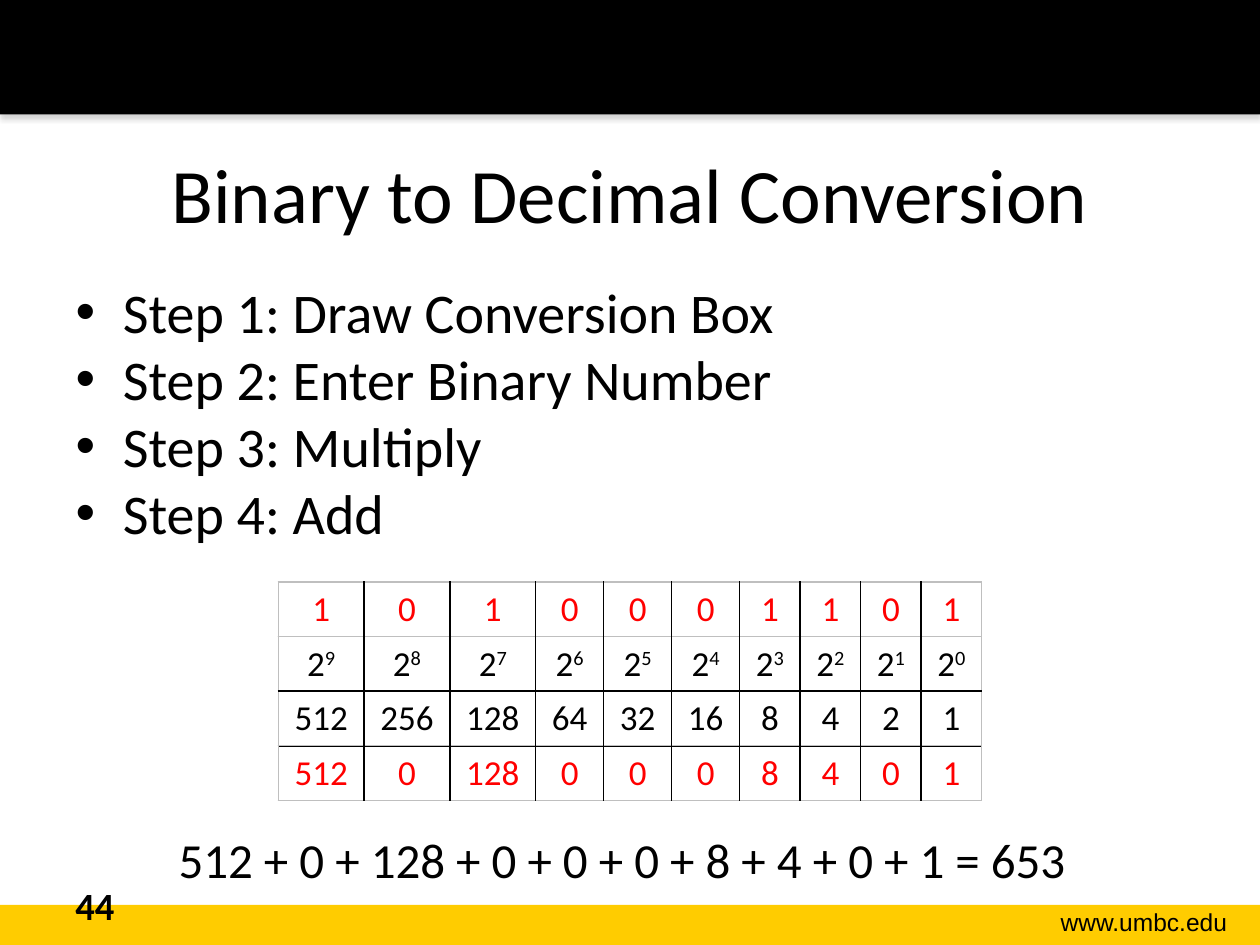
from lxml import etree
from pptx import Presentation
from pptx.dml.color import RGBColor
from pptx.enum.shapes import MSO_SHAPE
from pptx.enum.text import MSO_ANCHOR, PP_ALIGN
from pptx.oxml import parse_xml
from pptx.oxml.ns import nsdecls, qn
from pptx.util import Cm, Pt

RECTANGLE = MSO_SHAPE.RECTANGLE
MIDDLE, TOP = MSO_ANCHOR.MIDDLE, MSO_ANCHOR.TOP
LEFT, CENTER, RIGHT = PP_ALIGN.LEFT, PP_ALIGN.CENTER, PP_ALIGN.RIGHT

BLACK, RED, GOLD, GREY = "000000", "FF0000", "FFCC00", "BFBFBF"
SLIDE_WIDTH, SLIDE_HEIGHT = 25.4, 19.05
MARGIN = 1.27
COLUMN_WIDTHS = [1.73] * 3 + [1.37] * 3 + [1.22] * 4
ROW_HEIGHT = 1.1
BITS = "1010001101"


def color(value):
    return RGBColor.from_string(value)


def add_text(paragraph, text, size, fill=BLACK, font="Calibri", bold=False):
    run = paragraph.add_run()
    run.text = text
    run.font.size = Pt(size)
    run.font.name = font
    run.font.bold = bold
    run.font.color.rgb = color(fill)
    return run


def place(shape, left, top, width, height):
    shape.left, shape.top = Cm(left), Cm(top)
    shape.width, shape.height = Cm(width), Cm(height)


def add_bar(slide, top, height, fill):
    bar = slide.shapes.add_shape(RECTANGLE, 0, Cm(top), Cm(SLIDE_WIDTH), Cm(height))
    bar.shadow.inherit = False
    bar.fill.solid()
    bar.fill.fore_color.rgb = color(fill)
    bar.line.fill.background()
    return bar


def add_label(slide, left, top, width, height, text, size, alignment=LEFT, **style):
    box = slide.shapes.add_textbox(Cm(left), Cm(top), Cm(width), Cm(height))
    box.text_frame.word_wrap = True
    paragraph = box.text_frame.paragraphs[0]
    paragraph.alignment = alignment
    add_text(paragraph, text, size, **style)


def add_header(slide, height):
    bar = add_bar(slide, 0, height, BLACK)
    effects = bar._element.spPr.find(qn("a:effectLst"))
    effects.append(parse_xml(
        f'<a:outerShdw {nsdecls("a")} blurRad="39370" dist="22860" dir="5400000" '
        'rotWithShape="0"><a:srgbClr val="808080"><a:alpha val="35000"/>'
        '</a:srgbClr></a:outerShdw>'))


def add_footer(slide, top):
    add_bar(slide, top, SLIDE_HEIGHT - top, GOLD)
    add_label(slide, 19.94, top - 0.08, 5.05, 0.86, "www.umbc.edu", 14, RIGHT, font="Arial")
    add_label(slide, MARGIN, top - 0.59, 5.92, 1.02, "44", 22, bold=True)


def fill_title(slide, left, top, width, height):
    title = slide.shapes.title
    place(title, left, top, width, height)
    title.text_frame.vertical_anchor = MIDDLE
    paragraph = title.text_frame.paragraphs[0]
    paragraph.alignment = CENTER
    add_text(paragraph, "Binary to Decimal Conversion", 44)


def fill_steps(slide, left, top, width, height):
    body = slide.placeholders[1]
    place(body, left, top, width, height)
    frame = body.text_frame
    frame.vertical_anchor = TOP
    steps = ["Draw Conversion Box", "Enter Binary Number", "Multiply", "Add"]
    for number, step in enumerate(steps, 1):
        paragraph = frame.paragraphs[0] if number == 1 else frame.add_paragraph()
        paragraph.space_before = Pt(0)
        add_text(paragraph, f"Step {number}: {step}", 32)


def draw_border(cell, side, stroke):
    line = etree.SubElement(cell._tc.get_or_add_tcPr(), qn(f"a:ln{side}"), w="12700")
    fill = etree.SubElement(line, qn("a:solidFill"))
    etree.SubElement(fill, qn("a:srgbClr"), val=stroke)


def add_grid(slide, left, top, rows, fill=BLACK):
    """Each cell is a list of runs; every run after the first is an exponent."""
    last_row, last_column = len(rows) - 1, len(COLUMN_WIDTHS) - 1
    table = slide.shapes.add_table(
        len(rows), len(COLUMN_WIDTHS), Cm(left), Cm(top),
        Cm(sum(COLUMN_WIDTHS)), Cm(ROW_HEIGHT * len(rows))).table
    table.first_row = table.horz_banding = False
    for column, width in zip(table.columns, COLUMN_WIDTHS):
        column.width = Cm(width)
    for r, row in enumerate(rows):
        table.rows[r].height = Cm(ROW_HEIGHT)
        for c, texts in enumerate(row):
            cell = table.cell(r, c)
            outer = {"L": c == 0, "R": c == last_column, "T": r == 0, "B": r == last_row}
            for side, is_outer in outer.items():
                draw_border(cell, side, GREY if is_outer else BLACK)
            cell.fill.background()
            paragraph = cell.text_frame.paragraphs[0]
            paragraph.alignment = CENTER
            for position, text in enumerate(texts):
                run = add_text(paragraph, text, 20, fill)
                if position:
                    run.font._element.set("baseline", "30000")


def add_conversion_box(slide, left, top):
    exponents = range(len(BITS) - 1, -1, -1)
    empty = [[] for _ in BITS]
    powers = [["2", str(exponent)] for exponent in exponents]
    values = [[str(2 ** exponent)] for exponent in exponents]
    products = [[str(int(bit) * 2 ** exponent)] for bit, exponent in zip(BITS, exponents)]
    add_grid(slide, left, top, [empty, powers, values, empty])
    add_grid(slide, left, top, [[[bit] for bit in BITS]], RED)
    add_grid(slide, left, top + 3 * ROW_HEIGHT, [products], RED)


def main():
    presentation = Presentation()
    presentation.slide_width, presentation.slide_height = Cm(SLIDE_WIDTH), Cm(SLIDE_HEIGHT)
    slide = presentation.slides.add_slide(presentation.slide_layouts[1])
    content_width = SLIDE_WIDTH - 2 * MARGIN
    add_header(slide, 2.31)
    add_footer(slide, 18.24)
    fill_title(slide, MARGIN, 2.29, content_width, 3.18)
    fill_steps(slide, MARGIN, 5.46, content_width, 11.56)
    add_conversion_box(slide, 5.61, 11.73)
    add_label(slide, 3.35, 16.59, 18.67, 1.45,
              "512 + 0 + 128 + 0 + 0 + 0 + 8 + 4 + 0 + 1 = 653", 28)
    presentation.save("out.pptx")


if __name__ == "__main__":
    main()
